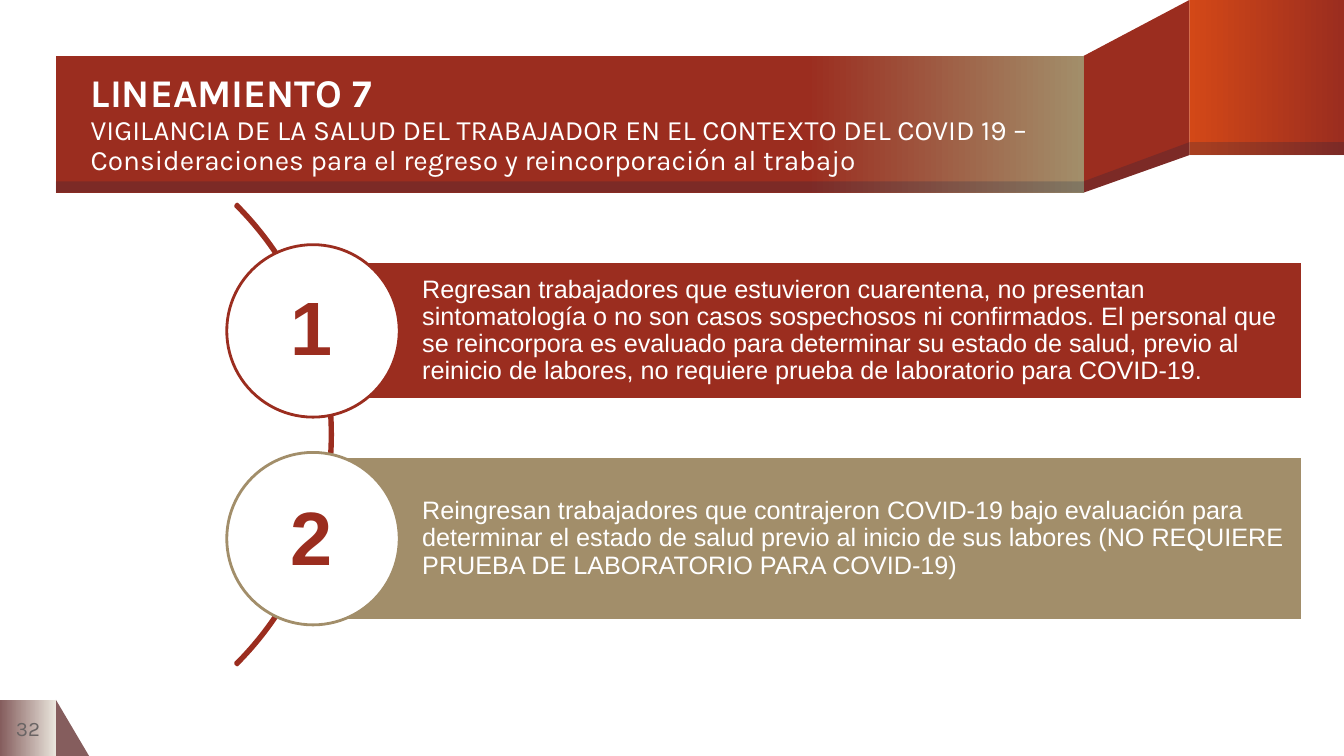
"""Build the Lineamiento 7 slide: folded title ribbon and two numbered bands on an arc."""
from copy import deepcopy
from dataclasses import dataclass

from lxml import etree
from pptx import Presentation, util as u
from pptx.dml.color import RGBColor
from pptx.enum import shapes, text
from pptx.oxml import ns

HEADING = "LINEAMIENTO 7"
SUBHEADING = ("VIGILANCIA DE LA SALUD DEL TRABAJADOR EN EL CONTEXTO DEL COVID 19 – "
              "Consideraciones para el regreso y reincorporación al trabajo")
PAGE_NUMBER = "32"


@dataclass(frozen=True)
class Theme:
    red: str = "9B2D1F"
    orange: str = "D34817"
    sand: str = "A28E6A"
    mauve: str = "855D5D"
    cream: str = "E9E5DC"
    navy: str = "001F46"
    gray: str = "696464"
    white: str = "FFFFFF"
    title_font: str = "Karla"
    body_font: str = "Arial"
    heading: float = 28
    subheading: float = 20
    body: float = 18
    number: float = 54
    page: float = 14.7
    stroke: float = 2
    shade: int = 20


THEME = Theme()
BANDS = [
    {"number": "1", "top": 4.68, "height": 2.46, "number_top": 4.91, "color": THEME.red,
     "text": "Regresan trabajadores que estuvieron cuarentena, no presentan sintomatología o no son "
             "casos sospechosos ni confirmados. El personal que se reincorpora es evaluado para "
             "determinar su estado de salud, previo al reinicio de labores, no requiere prueba de "
             "laboratorio para COVID-19."},
    {"number": "2", "top": 8.16, "height": 2.92, "number_top": 8.66, "color": THEME.sand,
     "text": "Reingresan trabajadores que contrajeron COVID-19 bajo evaluación para determinar el "
             "estado de salud previo al inicio de sus labores (NO REQUIERE PRUEBA DE LABORATORIO "
             "PARA COVID-19)"},
]

COLUMNS, ROWS = 24, 13.5
FOLD_LEFT, FOLD_RIGHT = 19.35, 21.24
RIBBON_TOP, RIBBON_BOTTOM, RIBBON_SHADE = 1, 3.44, 3.24
BACK_BOTTOM, BACK_SHADE = 2.77, 2.54
FOOTER_TOP = ROWS - 1
BAND_LEFT, BAND_RIGHT = 5.58, 23.25
DISC_LEFT, DISC = 4.05, 3.08
ARC = (-5.7, 1.94, 11.64, 11.64)

presentation = Presentation()
presentation.slide_width, presentation.slide_height = u.Inches(13.333), u.Inches(7.5)
UNIT = presentation.slide_width / COLUMNS
slide = presentation.slides.add_slide(presentation.slide_layouts[5])


def grid(*cells):
    return [round(cell * UNIT) for cell in cells]


def color(value):
    return RGBColor.from_string(value)


def paint(shape, fill=None, line=None, opacity=None):
    shape.shadow.inherit = False
    if fill is None:
        shape.fill.background()
    elif isinstance(fill, str):
        shape.fill.solid()
        shape.fill.fore_color.rgb = color(fill)
    else:
        shape.fill.gradient()
        shape.fill.gradient_angle = 0
        stop_list = shape.element.spPr.find(".//" + ns.qn("a:gsLst"))
        while len(stop_list) < len(fill):
            stop_list.append(deepcopy(stop_list[0]))
        for stop, (position, value) in zip(shape.fill.gradient_stops, fill):
            stop.position = position
            stop.color.rgb = color(value)
    if opacity:
        solid = shape.element.spPr.find(".//" + ns.qn("a:srgbClr"))
        etree.SubElement(solid, ns.qn("a:alpha"), val=str(opacity * 1000))
    if line:
        shape.line.color.rgb = color(line)
        shape.line.width = u.Pt(THEME.stroke)
    else:
        shape.line.fill.background()
    return shape


def add_shape(kind, box, **style):
    return paint(slide.shapes.add_shape(kind, *grid(*box)), **style)


def add_fold(points, **style):
    corners = [tuple(grid(*point)) for point in points]
    builder = slide.shapes.build_freeform(*corners[0], scale=1.0)
    builder.add_line_segments(corners[1:], close=True)
    return paint(builder.convert_to_shape(), **style)


def set_frame(frame, insets, anchor=text.MSO_ANCHOR.MIDDLE):
    frame.word_wrap = True
    frame.auto_size = text.MSO_AUTO_SIZE.NONE
    frame.vertical_anchor = anchor
    frame.margin_left, frame.margin_top, frame.margin_right, frame.margin_bottom = grid(*insets)
    return frame.paragraphs[0]


def add_run(paragraph, words, size, font, value, bold=False):
    run = paragraph.add_run()
    run.text = words
    run.font.size, run.font.name, run.font.bold = u.Pt(size), font, bold
    run.font.color.rgb = color(value)


def add_footer():
    box = (0, FOOTER_TOP, 1, 1)
    add_shape(shapes.MSO_SHAPE.RIGHT_TRIANGLE, (1, FOOTER_TOP, 0.59, 1), fill=THEME.mauve)
    tab = add_shape(shapes.MSO_SHAPE.RECTANGLE, box, fill=[(0, THEME.mauve), (1, THEME.cream)])
    paragraph = set_frame(tab.text_frame, (0, 0, 0, 0))
    paragraph.alignment = text.PP_ALIGN.CENTER
    add_run(paragraph, PAGE_NUMBER, THEME.page, THEME.title_font, THEME.gray)


def add_ribbon():
    rectangle = shapes.MSO_SHAPE.RECTANGLE
    front, back = FOLD_LEFT - 1, COLUMNS - FOLD_RIGHT
    shade = {"fill": THEME.navy, "opacity": THEME.shade}
    add_fold([(FOLD_RIGHT, 0), (FOLD_LEFT, RIBBON_TOP), (FOLD_LEFT, RIBBON_BOTTOM),
              (FOLD_RIGHT, BACK_BOTTOM)], fill=THEME.red)
    add_shape(rectangle, (FOLD_RIGHT, 0, back, BACK_BOTTOM),
              fill=[(0, THEME.orange), (1, THEME.red)])
    add_shape(rectangle, (1, RIBBON_TOP, front, RIBBON_BOTTOM - RIBBON_TOP),
              fill=[(0, THEME.red), (0.73, THEME.red), (1, THEME.sand)])
    add_fold([(FOLD_RIGHT, BACK_SHADE), (FOLD_LEFT, RIBBON_SHADE), (FOLD_LEFT, RIBBON_BOTTOM),
              (FOLD_RIGHT, BACK_BOTTOM)], **shade)
    add_shape(rectangle, (FOLD_RIGHT, BACK_SHADE, back, BACK_BOTTOM - BACK_SHADE), **shade)
    add_shape(rectangle, (1, RIBBON_SHADE, front, RIBBON_BOTTOM - RIBBON_SHADE), **shade)


def place_title():
    title = slide.shapes.title
    title.element.getparent().append(title.element)
    title.left, title.top, title.width, title.height = grid(1.62, 1.03, FOLD_LEFT - 1.62, 2.4)
    paragraph = set_frame(title.text_frame, (0, 0, 0, 0))
    paragraph.alignment = text.PP_ALIGN.LEFT
    paragraph.line_spacing = 0.9
    add_run(paragraph, HEADING, THEME.heading, THEME.title_font, THEME.white, bold=True)
    paragraph.add_line_break()
    add_run(paragraph, SUBHEADING, THEME.subheading, THEME.title_font, THEME.white)


def add_arc():
    arc = add_shape(shapes.MSO_SHAPE.BLOCK_ARC, ARC, line=THEME.red)
    for index, value in enumerate((189, 27, 0.004)):
        arc.adjustments[index] = value


def add_band(band):
    box = (BAND_LEFT, band["top"], BAND_RIGHT - BAND_LEFT, band["height"])
    bar = add_shape(shapes.MSO_SHAPE.RECTANGLE, box, fill=band["color"], line=THEME.white)
    paragraph = set_frame(bar.text_frame, (1.96, 0.09, 0.09, 0.09))
    paragraph.alignment = text.PP_ALIGN.LEFT
    paragraph.line_spacing = 0.9
    add_run(paragraph, band["text"], THEME.body, THEME.body_font, THEME.white)
    disc_top = band["top"] + (band["height"] - DISC) / 2
    add_shape(shapes.MSO_SHAPE.OVAL, (DISC_LEFT, disc_top, DISC, DISC),
              fill=THEME.white, line=band["color"])
    label = slide.shapes.add_textbox(*grid(5, band["number_top"], 1.9, 1.82))
    paragraph = set_frame(label.text_frame, (0.18, 0.09, 0.18, 0.09), text.MSO_ANCHOR.TOP)
    add_run(paragraph, band["number"], THEME.number, THEME.body_font, THEME.red, bold=True)


add_footer()
add_ribbon()
place_title()
add_arc()
for item in BANDS:
    add_band(item)
presentation.save("out.pptx")
